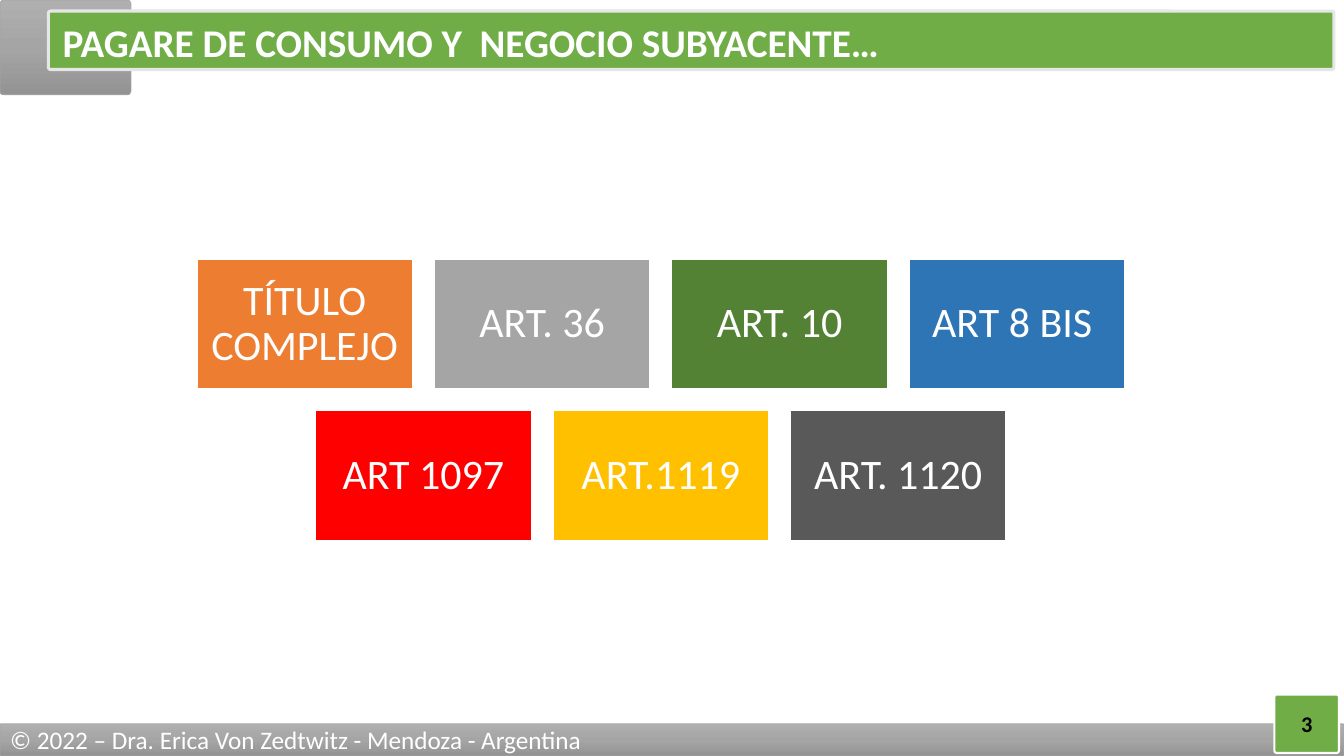
from copy import deepcopy
from dataclasses import dataclass

from pptx import Presentation
from pptx.dml.color import RGBColor as RGB
from pptx.enum.shapes import MSO_SHAPE as SHAPE
from pptx.enum.text import MSO_ANCHOR as ANCHOR, MSO_AUTO_SIZE as FIT, PP_ALIGN as ALIGN
from pptx.util import Inches, Pt


@dataclass(frozen=True)
class Theme:
    font: str = "Calibri"
    white: str = "FFFFFF"
    black: str = "000000"
    green: str = "70AD47"
    pale: str = "E7E6E6"
    gray: str = "A5A5A5"
    fade: tuple = ("AFAFAF", "A5A5A5", "939393")
    title: int = 28
    card: int = 30
    foot: int = 18
    page: int = 16


T = Theme()


def add_box(kind, area, fill, line, width):
    """Add a shadowless shape; a tuple of three colours fills it as a gradient."""
    box = slide.shapes.add_shape(kind, *map(Inches, area))
    box.shadow.inherit = False
    if kind == SHAPE.ROUNDED_RECTANGLE:
        box.adjustments[0] = 0.04
    if isinstance(fill, tuple):
        box.fill.gradient()
        box.fill.gradient_angle = 270
        first = box._element.xpath(".//a:gs")[0]
        first.addnext(deepcopy(first))
        for i, stop in enumerate(box.fill.gradient_stops):
            stop.position = i / 2
            stop.color.rgb = RGB.from_string(fill[i])
    else:
        box.fill.solid()
        box.fill.fore_color.rgb = RGB.from_string(fill)
    box.line.color.rgb = RGB.from_string(line)
    box.line.width = Pt(width)
    return box


def put_text(box, text, size, color=T.white, bold=False, align=ALIGN.LEFT, **frame):
    """Write one paragraph; extra values are set on the text frame."""
    tf = box.text_frame
    tf.text = text
    form = {"word_wrap": True, "auto_size": FIT.NONE, "vertical_anchor": ANCHOR.MIDDLE}
    for name, value in (form | frame).items():
        setattr(tf, name, value)
    para = tf.paragraphs[0]
    para.alignment = align
    font = para.runs[0].font
    look = {"name": T.font, "size": Pt(size), "bold": bold}
    for name, value in look.items():
        setattr(font, name, value)
    font.color.rgb = RGB.from_string(color)
    return para


deck = Presentation()
deck.slide_width, deck.slide_height = Inches(13.33), Inches(7.5)
slide = deck.slides.add_slide(deck.slide_layouts[5])

# Frame: corner, title bar, footer and page number
ROUND = SHAPE.ROUNDED_RECTANGLE
add_box(ROUND, (0, 0, 1.3, 0.94), T.fade, T.gray, 0.5)
add_box(ROUND, (0.48, 0.11, 12.75, 0.58), T.green, T.pale, 2.25)
foot = add_box(ROUND, (0, 7.18, 13.33, 0.32), T.fade, T.gray, 0.5)
put_text(foot, "© 2022 – Dra. Erica Von Zedtwitz - Mendoza - Argentina", T.foot)
page = add_box(ROUND, (12.64, 6.89, 0.64, 0.58), T.green, T.white, 1.5)
put_text(page, "3", T.page, T.black, True, ALIGN.CENTER)

# Cards: each row is centred on the same axis
rows = [
    [("TÍTULO COMPLEJO", "ED7D31"), ("ART. 36", T.gray),
     ("ART. 10", "548235"), ("ART 8 BIS ", "2E75B6")],
    [("ART 1097", "FF0000"), ("ART.1119", "FFC000"), ("ART. 1120", "595959")],
]
WIDE, HIGH, GAP, MID, TOP = 2.14, 1.29, 0.215, 6.555, 2.57
pad = Inches(0.12)
inset = {f"margin_{side}": pad for side in ("left", "top", "right", "bottom")}
for r, row in enumerate(rows):
    left = MID - (len(row) * (WIDE + GAP) - GAP) / 2
    for c, (text, color) in enumerate(row):
        area = (left + c * (WIDE + GAP), TOP + r * (HIGH + GAP), WIDE, HIGH)
        card = add_box(SHAPE.RECTANGLE, area, color, T.white, 1)
        para = put_text(card, text, T.card, align=ALIGN.CENTER, **inset)
        para.line_spacing = 0.9

# Title, brought in front of its bar
title = slide.shapes.title
place = {"left": 0.52, "top": 0.2, "width": 12.7, "height": 0.49}
for name, value in place.items():
    setattr(title, name, Inches(value))
para = put_text(title, "PAGARE DE CONSUMO Y  NEGOCIO SUBYACENTE…", T.title, bold=True)
para.line_spacing = 0.9
slide.shapes._spTree.append(title._element)

deck.save("out.pptx")
